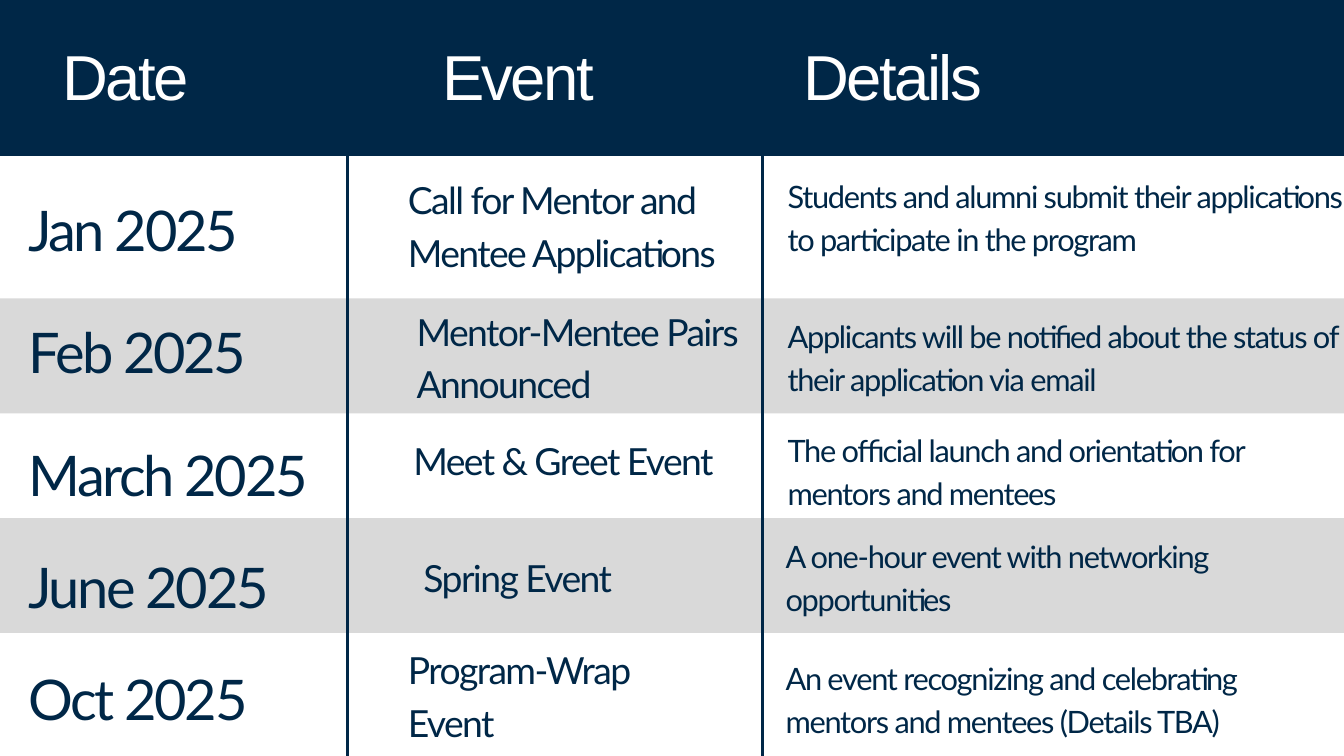
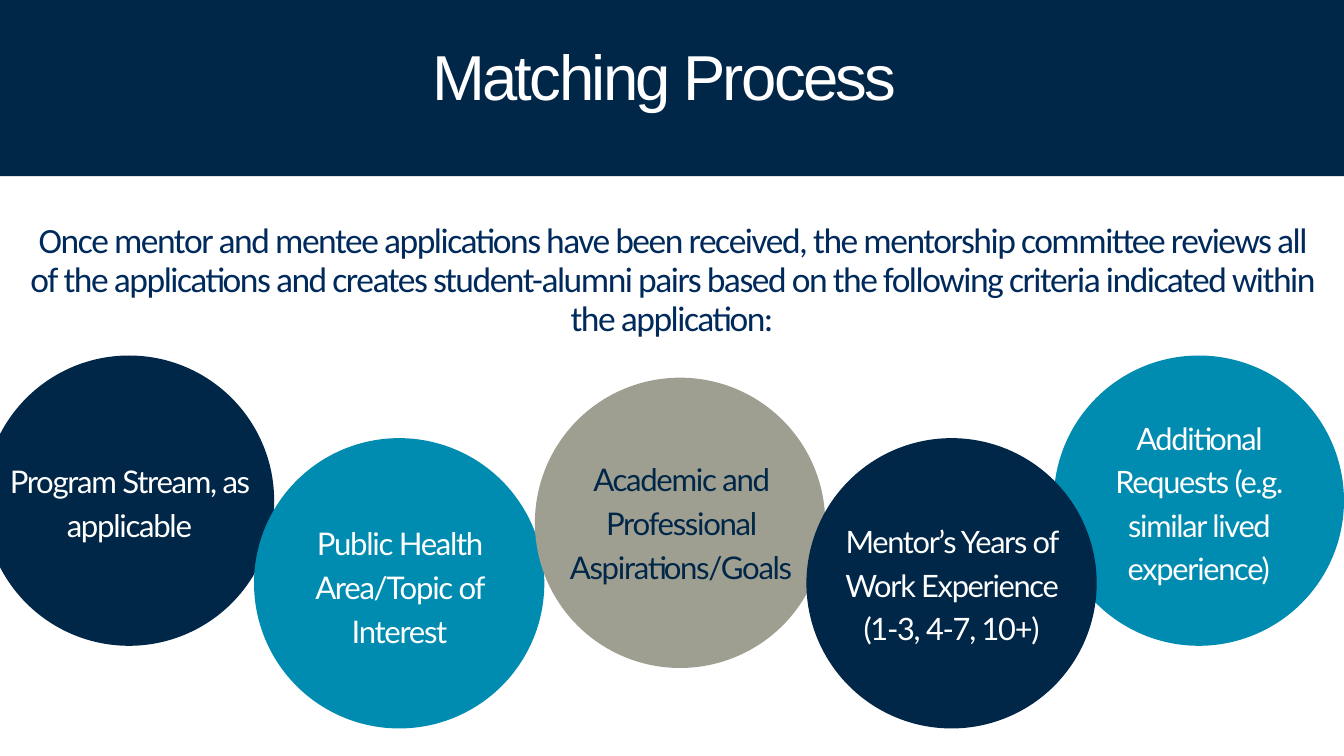
"""Builds the mentorship timeline and matching process slides."""
from lxml.etree import SubElement
from pptx import Presentation
from pptx.dml.color import RGBColor
from pptx.enum.shapes import MSO_CONNECTOR, MSO_SHAPE
from pptx.enum.text import MSO_ANCHOR, MSO_AUTO_SIZE, PP_ALIGN
from pptx.oxml.ns import qn
from pptx.util import Inches, Pt

NAVY, TEAL, STONE, GREY, WHITE = "002747", "008BB0", "9E9E91", "D9D9D9", "FFFFFF"
BODY_BLUE = "002A5C"
LEFT, CENTER = PP_ALIGN.LEFT, PP_ALIGN.CENTER
HEADING = (68, 74.8, -2.9, "Arial", WHITE, CENTER)
rgb = RGBColor.from_string


def add_block(s, kind, x, y, w, h, color):
    """Add a plain filled shape."""
    sp = s.shapes.add_shape(kind, Inches(x), Inches(y), Inches(w), Inches(h))
    sp.shadow.inherit = False
    sp.fill.solid()
    sp.fill.fore_color.rgb = rgb(color)
    sp.line.fill.background()
    return sp


def add_text(s, text, x, y, w, h, style, sp=None):
    """Write styled text into a placeholder or a new text box."""
    size, spacing, tracking, font, color, align = style
    sp = sp or s.shapes.add_textbox(0, 0, 0, 0)
    sp.left, sp.top, sp.width, sp.height = Inches(x), Inches(y), Inches(w), Inches(h)
    tf = sp.text_frame
    tf.margin_left = tf.margin_right = tf.margin_top = tf.margin_bottom = 0
    tf.word_wrap = True
    tf.auto_size = MSO_AUTO_SIZE.SHAPE_TO_FIT_TEXT
    tf.vertical_anchor = MSO_ANCHOR.TOP
    tf.text = text
    for p in tf.paragraphs:
        p.alignment = align
        p.line_spacing = Pt(spacing)
        for r in p.runs:
            r.font.size = Pt(size)
            r.font.name = font
            r.font.color.rgb = rgb(color)
            r.font._element.set("spc", str(round(tracking * 100)))
    return sp


prs = Presentation()
prs.slide_width, prs.slide_height = Inches(20), Inches(11.25)

s = prs.slides.add_slide(prs.slide_layouts[6])
for y in (4.44, 7.71):
    add_block(s, MSO_SHAPE.RECTANGLE, 0, y, 21.31, 1.71, GREY)
add_block(s, MSO_SHAPE.RECTANGLE, -0.65, -0.06, 21.31, 2.38, NAVY)

for heading, x, w in (("Date", 0.6, 2.54), ("Event", 6.44, 2.54), ("Details", 11.72, 3.13)):
    add_text(s, heading, x, 0.64, w, 1.05, HEADING)

months = "Jan 2025\nFeb 2025\nMarch 2025\nJune 2025\nOct 2025"
dates = add_text(s, months, 0.42, 2.08, 4.49, 8.68, (60, 131.4, -2.5, "Lato", NAVY, LEFT))
for p in dates.text_frame.paragraphs[3:]:
    p.line_spacing = Pt(120)

events = [
    ("Call for Mentor and Mentee Applications", 6.07, 2.52, 5.25, 1.53, LEFT),
    ("Mentor-Mentee Pairs Announced", 6.2, 4.48, 4.99, 1.53, LEFT),
    ("Meet & Greet Event", 6.07, 6.4, 4.63, 0.75, CENTER),
    ("Spring Event", 6.03, 8.14, 3.35, 0.75, CENTER),
    ("Program-Wrap Event", 6.07, 9.52, 4.4, 1.53, LEFT),
]
for event, x, y, w, h, align in events:
    add_text(s, event, x, y, w, h, (40, 56.4, -1.7, "Lato", NAVY, align))

details = [
    ("Students and alumni submit their applications to participate in the program", 11.72, 2.55, 8.28),
    ("Applicants will be notified about the status of their application via email", 11.72, 4.63, 8.28),
    ("The official launch and orientation for mentors and mentees", 11.72, 6.33, 7.86),
    ("A one-hour event with networking opportunities", 11.69, 7.9, 7.86),
    ("An event recognizing and celebrating mentors and mentees (Details TBA)", 11.69, 9.72, 7.86),
]
for detail, x, y, w in details:
    add_text(s, detail, x, y, w, 1.26, (33, 46.5, -1.4, "Lato", NAVY, LEFT))

for x, top in ((5.17, -2.75), (11.35, -2.06)):
    divider = s.shapes.add_connector(
        MSO_CONNECTOR.STRAIGHT, Inches(x), Inches(top), Inches(x), Inches(top + 17.75))
    divider.line.color.rgb = rgb(NAVY)
    divider.line.width = Pt(3.75)
    SubElement(divider._element.spPr, qn("a:effectLst"))

s = prs.slides.add_slide(prs.slide_layouts[5])
band = add_block(s, MSO_SHAPE.RECTANGLE, -3.52, 0, 24.07, 2.62, NAVY)
title = add_text(s, "Matching Process", 3.78, 0.64, 12.21, 1.05, HEADING, s.shapes.title)
band.element.addnext(title.element)

intro = ("Once mentor and mentee applications have been received, the mentorship committee "
         "reviews all of the applications and creates student-alumni pairs based on the "
         "following criteria indicated within the application:")
add_text(s, intro, 0.37, 3.3, 19.26, 2.3, (38, 41.8, -1.6, "Calibri", BODY_BLUE, CENTER))

circles = [(-0.24, 5.29, NAVY), (3.78, 6.52, TEAL), (7.96, 5.62, STONE),
           (15.68, 5.29, TEAL), (12, 6.52, NAVY)]
for x, y, color in circles:
    add_block(s, MSO_SHAPE.OVAL, x, y, 4.32, 4.32, color)

criteria = [
    ("Program Stream, as applicable", 0.07, 6.78, 3.71, 1.28, 33.4, 47.1, WHITE),
    ("Public Health Area/Topic of Interest", 4.09, 7.71, 3.71, 1.93, 33.4, 47.1, WHITE),
    ("Academic and Professional Aspirations/Goals", 8.27, 6.75, 3.73, 1.93, 33.4, 47.1, NAVY),
    ("Mentor’s Years of Work Experience (1-3, 4-7, 10+)", 12.43, 7.69, 3.46, 1.9, 33, 46.5, WHITE),
    ("Additional Requests (e.g. similar lived experience)", 16.11, 6.15, 3.46, 2.55, 33, 46.5, WHITE),
]
for criterion, x, y, w, h, size, spacing, color in criteria:
    add_text(s, criterion, x, y, w, h, (size, spacing, -1.4, "Lato", color, CENTER))

prs.save("out.pptx")
